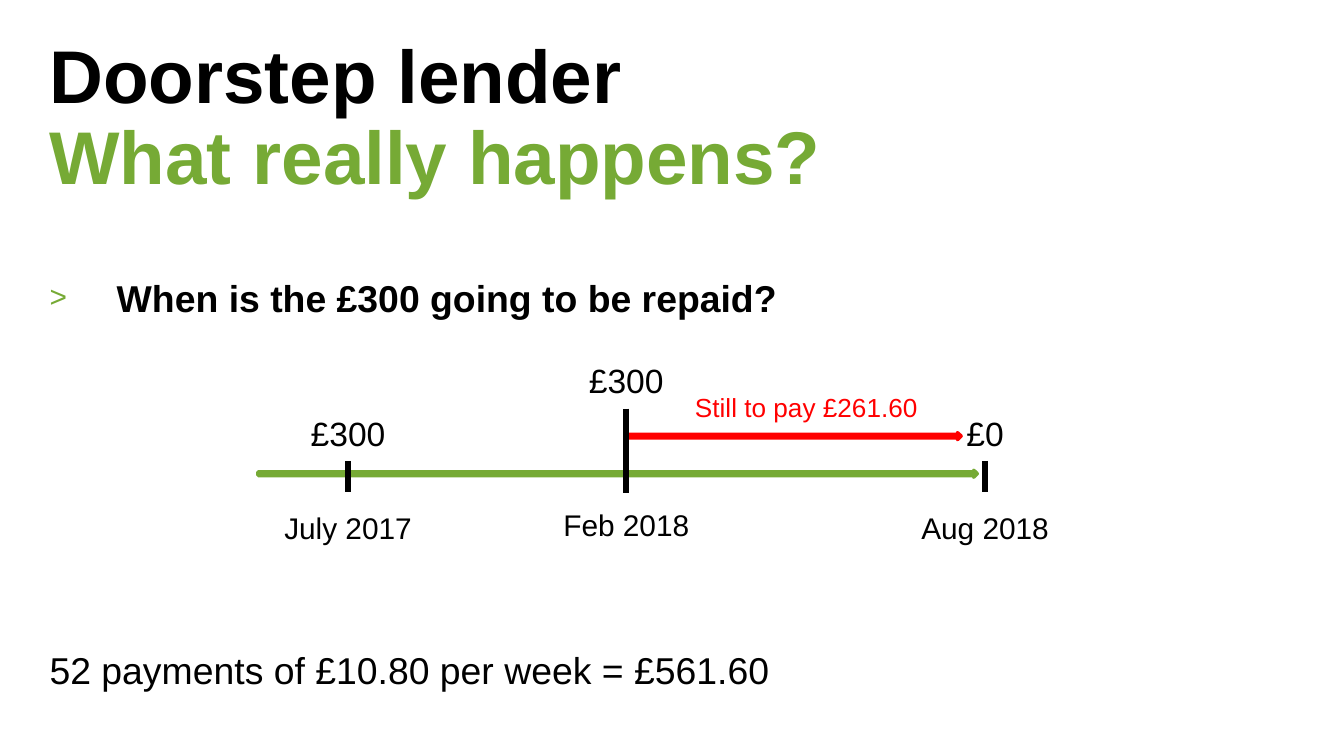
import dataclasses

import pptx
import pptx.dml.color
import pptx.enum.shapes
import pptx.enum.text
import pptx.util
from lxml import etree
from pptx.oxml.ns import qn

Inches = pptx.util.Inches
Pt = pptx.util.Pt


@dataclasses.dataclass(frozen=True)
class Theme:
    font: str = "Arial"
    black: str = "000000"
    green: str = "76AA35"
    dark_green: str = "424716"
    red: str = "FF0000"
    title: int = 40
    body: int = 20
    amount: int = 18
    date: int = 16
    note: int = 14
    arrow_line: int = 2
    tick_line: int = 3


THEME = Theme()


def color(value):
    return pptx.dml.color.RGBColor.from_string(value)


def add_span(para, text, size, ink=THEME.black, bold=False):
    span = para.add_run()
    span.text = text
    span.font.name = THEME.font
    span.font.size = Pt(size)
    span.font.bold = bold
    span.font.color.rgb = color(ink)


def add_box(page, left, top, width, height):
    """Add a wrapping text box and return its first paragraph."""
    box = page.shapes.add_textbox(
        Inches(left), Inches(top), Inches(width), Inches(height))
    box.text_frame.word_wrap = True
    return box.text_frame.paragraphs[0]


def add_label(page, center, top, width, height, text, size, ink=THEME.black):
    para = add_box(page, center - width / 2, top, width, height)
    para.alignment = pptx.enum.text.PP_ALIGN.CENTER
    add_span(para, text, size, ink)


def add_title(page, first_line, second_line):
    para = add_box(page, 0.27, 0.24, 7.17, 0.81)
    para.line_spacing = 0.9
    add_span(para, first_line, THEME.title, bold=True)
    para.add_line_break()
    add_span(para, second_line, THEME.title, THEME.green, bold=True)


def add_statement(page, top, width, text, bold=False):
    para = add_box(page, 0.27, top, width, 0.63)
    para.space_before = Pt(6)
    add_span(para, text, THEME.body, bold=bold)
    return para


def add_bullet(para, mark):
    properties = para._p.get_or_add_pPr()
    properties.set("marL", str(Inches(0.5)))
    properties.set("indent", str(-Inches(0.5)))
    ink = etree.SubElement(properties, qn("a:buClr"))
    etree.SubElement(ink, qn("a:srgbClr"), val=THEME.green)
    etree.SubElement(properties, qn("a:buSzPct"), val="80000")
    etree.SubElement(properties, qn("a:buFont"), typeface=THEME.font)
    etree.SubElement(properties, qn("a:buChar"), char=mark)


def add_arrow(page, left, top, width, ink):
    arrow = page.shapes.add_shape(
        pptx.enum.shapes.MSO_SHAPE.RIGHT_ARROW,
        Inches(left), Inches(top), Inches(width), Inches(0.05))
    arrow.shadow.inherit = False
    arrow.fill.solid()
    arrow.fill.fore_color.rgb = color(THEME.dark_green)
    arrow.line.color.rgb = color(ink)
    arrow.line.width = Pt(THEME.arrow_line)


def add_tick(page, x, top, bottom):
    tick = page.shapes.add_connector(
        pptx.enum.shapes.MSO_CONNECTOR.STRAIGHT,
        Inches(x), Inches(top), Inches(x), Inches(bottom))
    tick.line.color.rgb = color(THEME.black)
    tick.line.width = Pt(THEME.tick_line)
    etree.SubElement(tick._element.spPr, qn("a:effectLst"))


def add_timeline(page):
    add_label(page, 6, 2.86, 2.42, 0.34,
              "Still to pay £261.60", THEME.note, THEME.red)
    add_arrow(page, 1.92, 3.5, 5.35, THEME.green)
    add_arrow(page, 4.66, 3.22, 2.49, THEME.red)
    # x, amount, amount top, tick top, tick bottom, date, date top
    milestones = [
        (2.59, "£300", 3.02, 3.43, 3.66, "July 2017", 3.74),
        (4.66, "£300", 2.63, 3.04, 3.67, "Feb 2018", 3.72),
        (7.33, "£0", 3.02, 3.43, 3.66, "Aug 2018", 3.74),
    ]
    for x, amount, amount_top, top, bottom, date, date_top in milestones:
        add_tick(page, x, top, bottom)
        add_label(page, x, amount_top, 0.83, 0.4, amount, THEME.amount)
        add_label(page, x, date_top, 1.34, 0.37, date, THEME.date)


def main():
    deck = pptx.Presentation()
    deck.slide_width = Inches(10)
    deck.slide_height = Inches(10 * 9 / 16)
    page = deck.slides.add_slide(deck.slide_layouts[6])
    add_title(page, "Doorstep lender", "What really happens?")
    question = add_statement(
        page, 2, 5.71, "When is the £300 going to be repaid?", bold=True)
    add_bullet(question, ">")
    add_timeline(page)
    add_statement(page, 4.77, 9.45, "52 payments of £10.80 per week = £561.60")
    deck.save("out.pptx")


if __name__ == "__main__":
    main()
